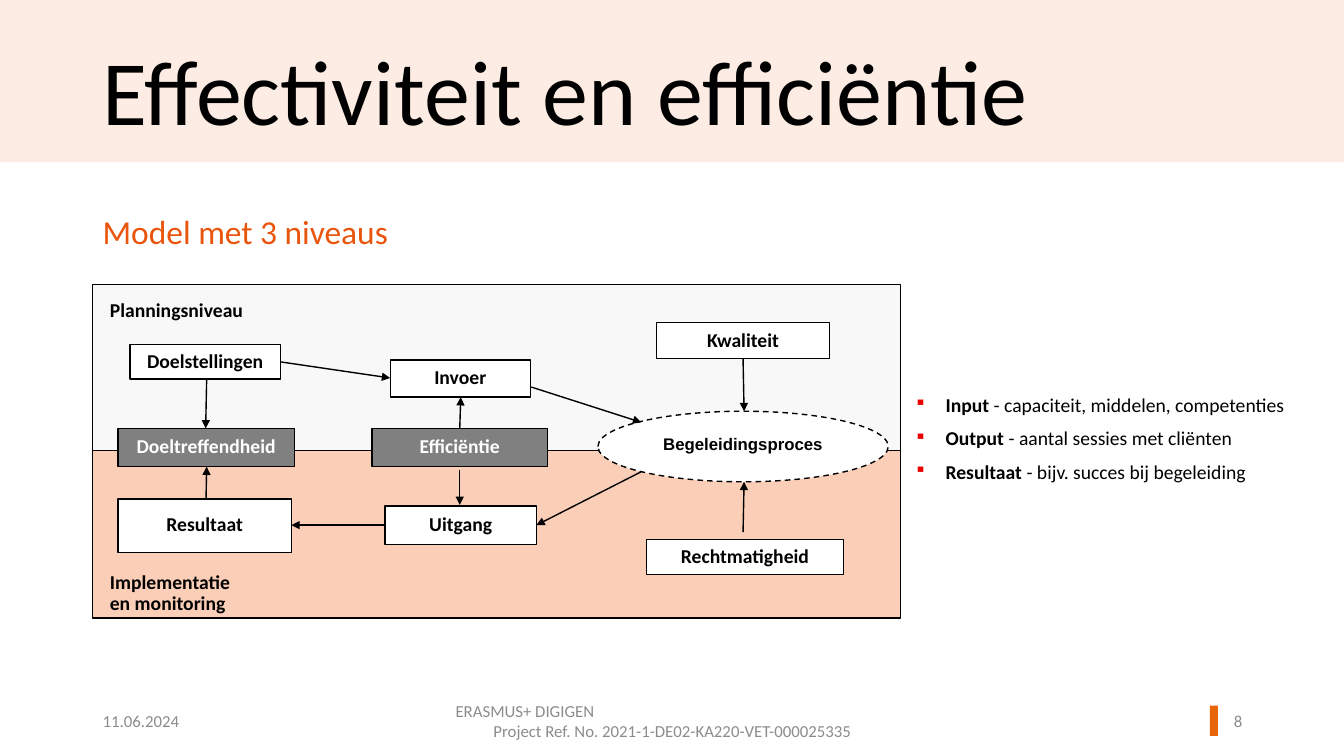
"""Build the slide on effectiveness and efficiency with its three-level model."""
from lxml import etree
from pptx import Presentation, util as u
from pptx.dml import color
from pptx.enum import dml, shapes, text
from pptx.oxml import ns

COLORS = {
    "black": "000000", "white": "FFFFFF", "band": "FDECE3", "accent": "E86507",
    "planning": "F8F8F8", "monitoring": "FBCEB8", "effect": "808080",
    "bullet": "EA0000", "subtitle": "E9550D", "footer": "8C8C8C",
}
LEFT, CENTER, RIGHT = (text.PP_ALIGN.LEFT, text.PP_ALIGN.CENTER, text.PP_ALIGN.RIGHT)
RECT, OVAL = shapes.MSO_SHAPE.RECTANGLE, shapes.MSO_SHAPE.OVAL
MIDDLE, TOP = text.MSO_ANCHOR.MIDDLE, text.MSO_ANCHOR.TOP

BOXES = [
    ("Doeltreffendheid", 1.17, 4.25, 1.75, 0.38, "effect"),
    ("Efficiëntie", 3.69, 4.25, 1.74, 0.38, "effect"),
    ("Doelstellingen", 1.29, 3.42, 1.49, 0.34, "white"),
    ("Invoer", 3.87, 3.57, 1.39, 0.37, "white"),
    ("Uitgang", 3.82, 5.02, 1.5, 0.38, "white"),
    ("Rechtmatigheid", 6.41, 5.35, 1.96, 0.35, "white"),
    ("Kwaliteit", 6.51, 3.2, 1.72, 0.36, "white"),
    ("Resultaat", 1.17, 4.95, 1.72, 0.53, "white"),
]
ARROWS = [
    (7.37, 3.56, 7.38, 4.08), (7.37, 5.28, 7.38, 4.78),
    (2.78, 3.59, 3.87, 3.75), (5.27, 3.84, 6.36, 4.19),
    (3.82, 5.21, 2.89, 5.21), (6.36, 4.68, 5.32, 5.21),
    (4.56, 4.25, 4.57, 3.94), (2.05, 3.76, 2.04, 4.25),
    (2.04, 5.15, 2.05, 4.63), (4.56, 4.66, 4.56, 5.01),
]
BULLETS = [
    ("Input ", "- capaciteit, middelen, competenties"),
    ("Output ", "- aantal sessies met cliënten"),
    ("Resultaat ", "- bijv. succes bij begeleiding"),
]


def rgb(name):
    """Return the named colour."""
    return color.RGBColor.from_string(COLORS[name])


def apply(obj, **values):
    """Set each given attribute on an object."""
    for key, value in values.items():
        setattr(obj, key, value)


def add_run(p, words, size, ink="black", bold=False, font="Calibri"):
    """Add a formatted run to a paragraph."""
    r = p.add_run()
    r.text = words
    apply(r.font, size=u.Pt(size), bold=bold, name=font)
    r.font.color.rgb = rgb(ink)


def add_shape(s, kind, place, fill, outlined=True):
    """Add a filled preset shape."""
    sp = s.shapes.add_shape(kind, *map(u.Inches, place))
    sp.shadow.inherit = False
    sp.fill.solid()
    sp.fill.fore_color.rgb = rgb(fill)
    if outlined:
        sp.line.color.rgb = rgb("black")
        sp.line.width = u.Pt(1)
    else:
        sp.line.fill.background()
    return sp


def add_label(sp, words, size=14, ink="black", font="Calibri", spacing=0.9):
    """Centre a bold label in a shape."""
    tf = sp.text_frame
    side, edge = u.Inches(0.07), u.Inches(0.04)
    apply(tf, word_wrap=False, vertical_anchor=MIDDLE, margin_left=side,
          margin_right=side, margin_top=edge, margin_bottom=edge)
    p = tf.paragraphs[0]
    apply(p, alignment=CENTER, line_spacing=spacing)
    add_run(p, words, size, ink, True, font)


def add_text(s, place, lines, size, ink="black", bold=False, aligns=(LEFT,),
             anchor=TOP, spacing=1.0, side=0.1):
    """Add a text box with one paragraph for each line."""
    tf = s.shapes.add_textbox(*map(u.Inches, place)).text_frame
    apply(tf, word_wrap=True, vertical_anchor=anchor,
          margin_left=u.Inches(side), margin_right=u.Inches(side))
    for i, words in enumerate(lines):
        p = tf.add_paragraph() if i else tf.paragraphs[0]
        apply(p, alignment=aligns[i % len(aligns)], line_spacing=spacing)
        add_run(p, words, size, ink, bold)


def add_arrow(s, ends):
    """Add a straight arrow pointing at its second end."""
    line = s.shapes.add_connector(shapes.MSO_CONNECTOR.STRAIGHT, *map(u.Inches, ends))
    line.line.color.rgb = rgb("black")
    line.line.width = u.Pt(1)
    etree.SubElement(line.line._get_or_add_ln(), ns.qn("a:tailEnd"), type="triangle")
    etree.SubElement(line._element.spPr, ns.qn("a:effectLst"))


def add_bullets(s, place, items):
    """Add a bulleted list of terms with explanations."""
    tf = s.shapes.add_textbox(*map(u.Inches, place)).text_frame
    tf.word_wrap = True
    for i, (term, meaning) in enumerate(items):
        p = tf.add_paragraph() if i else tf.paragraphs[0]
        p.space_before = u.Pt(7 if i else 0)
        pr = p._p.get_or_add_pPr()
        indent = u.Inches(0.31)
        pr.set("marL", str(indent))
        pr.set("indent", str(-indent))
        tint = etree.SubElement(pr, ns.qn("a:buClr"))
        etree.SubElement(tint, ns.qn("a:srgbClr"), val=COLORS["bullet"])
        etree.SubElement(pr, ns.qn("a:buSzPct"), val="85000")
        etree.SubElement(pr, ns.qn("a:buChar"), char="▪")
        add_run(p, term, 14, bold=True)
        add_run(p, meaning, 14)


def add_model(s):
    """Draw the two levels with their boxes, process and arrows."""
    add_shape(s, RECT, (0.92, 2.82, 8.01, 2.84), "planning")
    add_shape(s, RECT, (0.92, 4.47, 8.01, 1.66), "monitoring")
    process = add_shape(s, OVAL, (5.93, 4.08, 2.88, 0.7), "white")
    process.line.dash_style = dml.MSO_LINE.DASH
    add_label(process, "Begeleidingsproces", 12, font="Arial", spacing=0.7)
    level = dict(size=14, bold=True, spacing=0.9, side=0.09)
    add_text(s, (1, 2.93, 2.02, 0.31), ["Planningsniveau"], **level)
    add_text(s, (1, 5.63, 2.43, 0.52), ["Implementatie", "en monitoring"], **level)
    for ends in ARROWS:
        add_arrow(s, ends)
    for words, *place, fill in BOXES:
        ink = "white" if fill == "effect" else "black"
        add_label(add_shape(s, RECT, place, fill), words, ink=ink)


def main():
    """Build and save the presentation."""
    prs = Presentation()
    apply(prs, slide_width=u.Inches(13.33), slide_height=u.Inches(7.5))
    s = prs.slides.add_slide(prs.slide_layouts[6])
    add_shape(s, RECT, (0, 0, 13.33, 1.61), "band", outlined=False)
    add_shape(s, RECT, (12, 7, 0.08, 0.3), "accent", outlined=False)
    add_model(s)
    add_bullets(s, (8.97, 3.85, 4.37, 1.04), BULLETS)
    add_text(s, (0.92, 0.41, 10.32, 0.85), ["Effectiviteit en efficiëntie"], 65.7, spacing=0.9)
    add_text(s, (0.92, 2.04, 10.1, 0.5), ["Model met 3 niveaus"], 23.9, "subtitle")
    footer = dict(size=12, ink="footer", anchor=MIDDLE)
    add_text(s, (0.92, 6.95, 3, 0.4), ["11.06.2024"], **footer)
    project = ["ERASMUS+ DIGIGEN", "Project Ref. No. 2021-1-DE02-KA220-VET-000025335"]
    add_text(s, (4.42, 6.95, 4.5, 0.4), project, aligns=(LEFT, CENTER), **footer)
    add_text(s, (11.77, 6.95, 0.65, 0.4), ["8"], aligns=(RIGHT,), **footer)
    prs.save("out.pptx")


if __name__ == "__main__":
    main()
